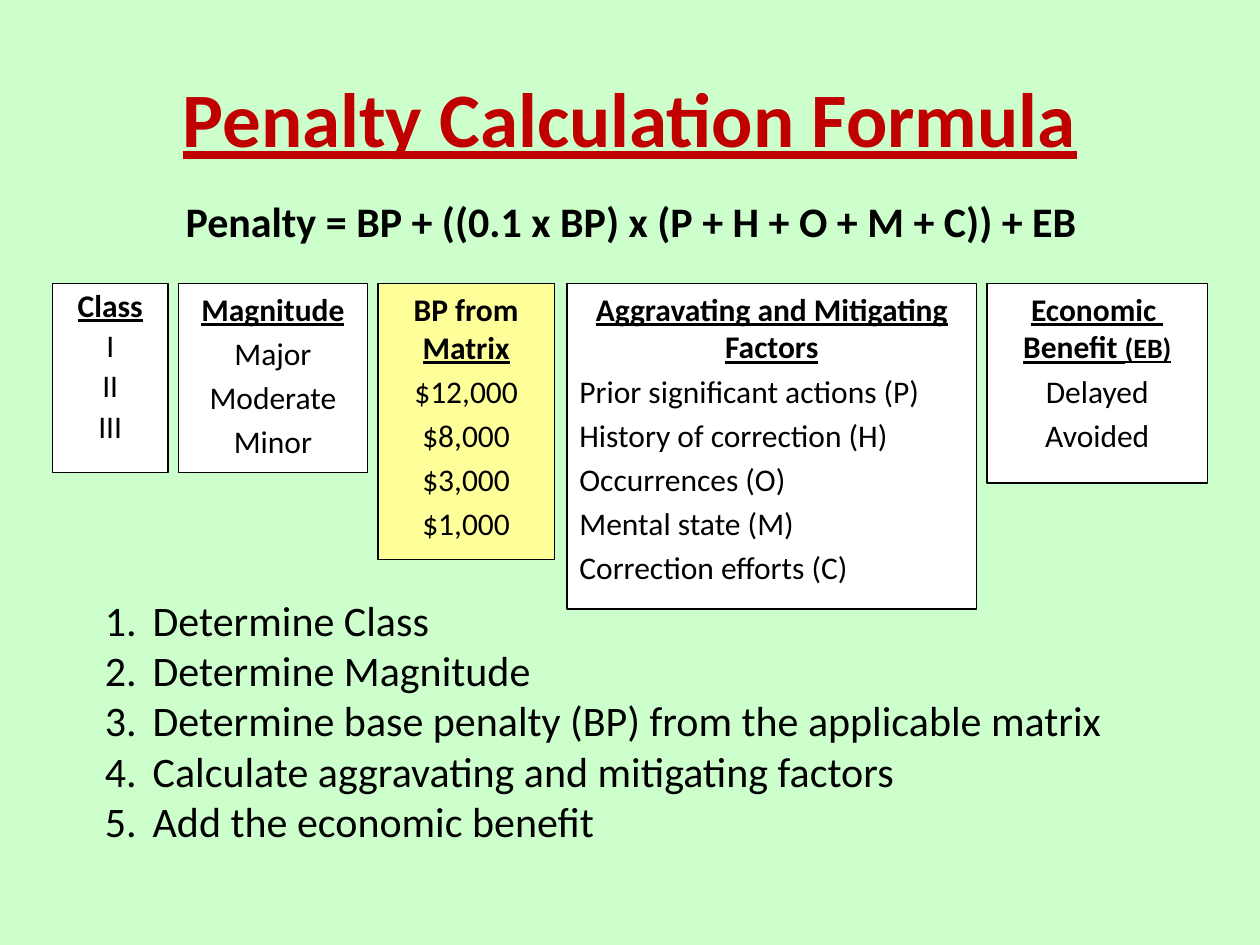
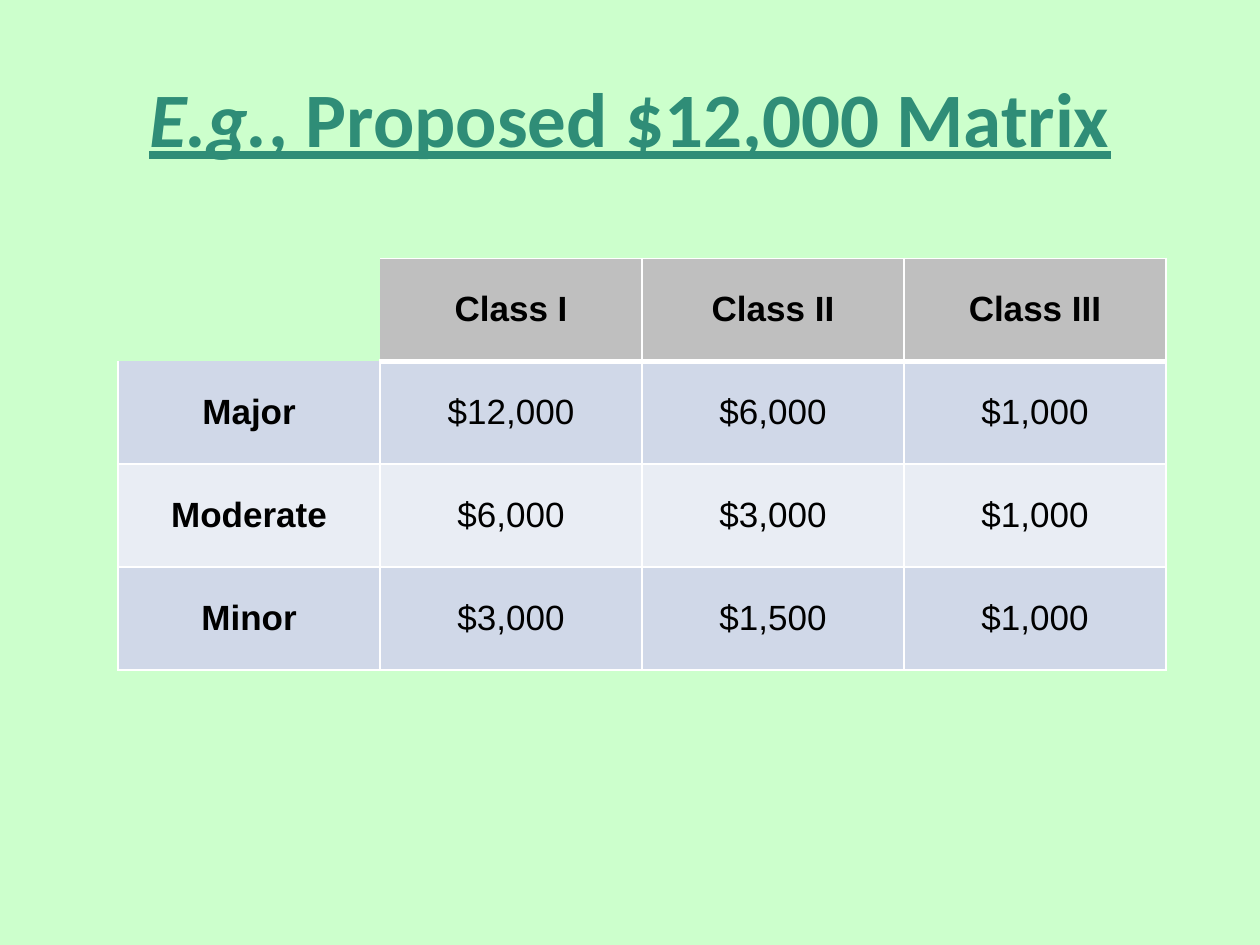
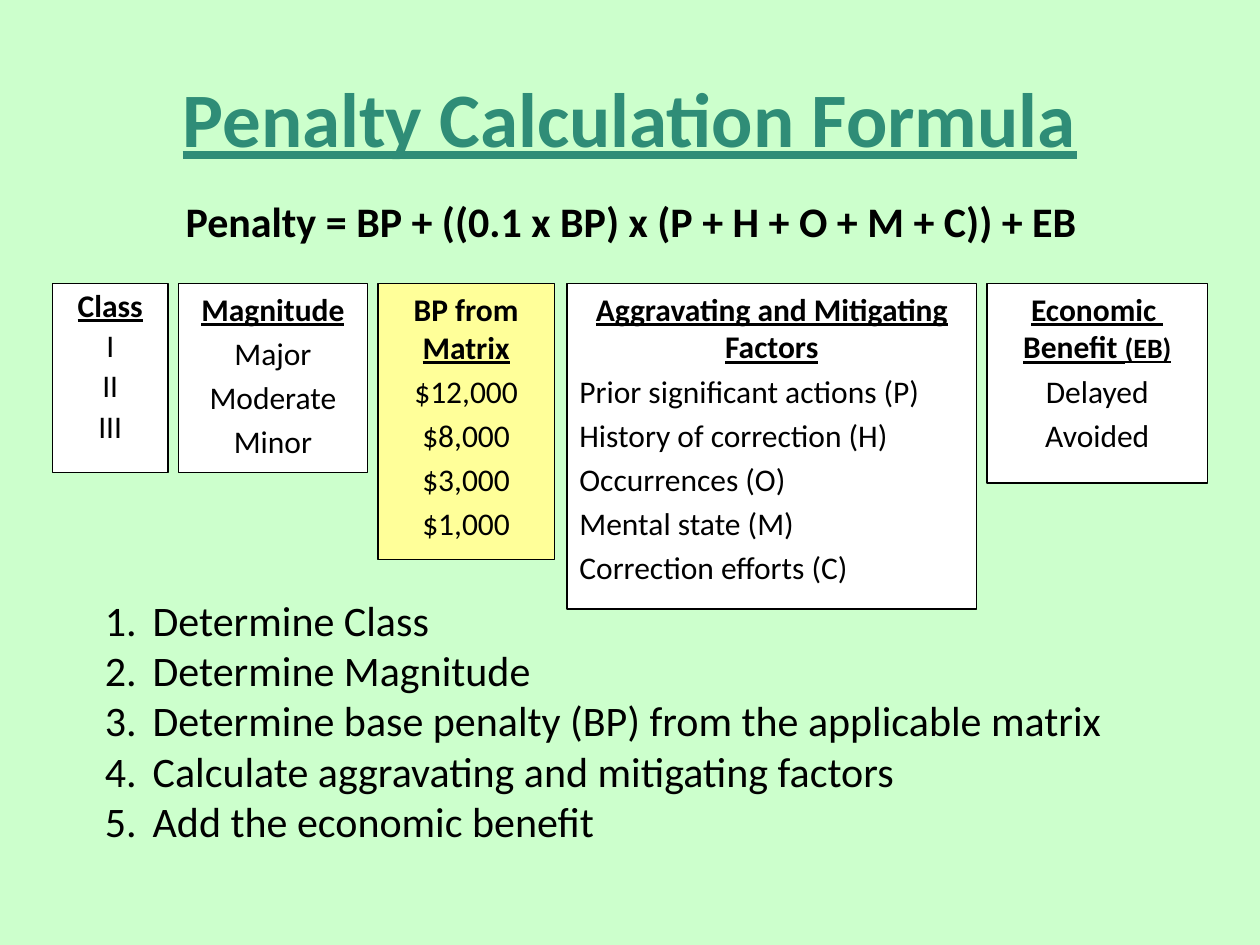
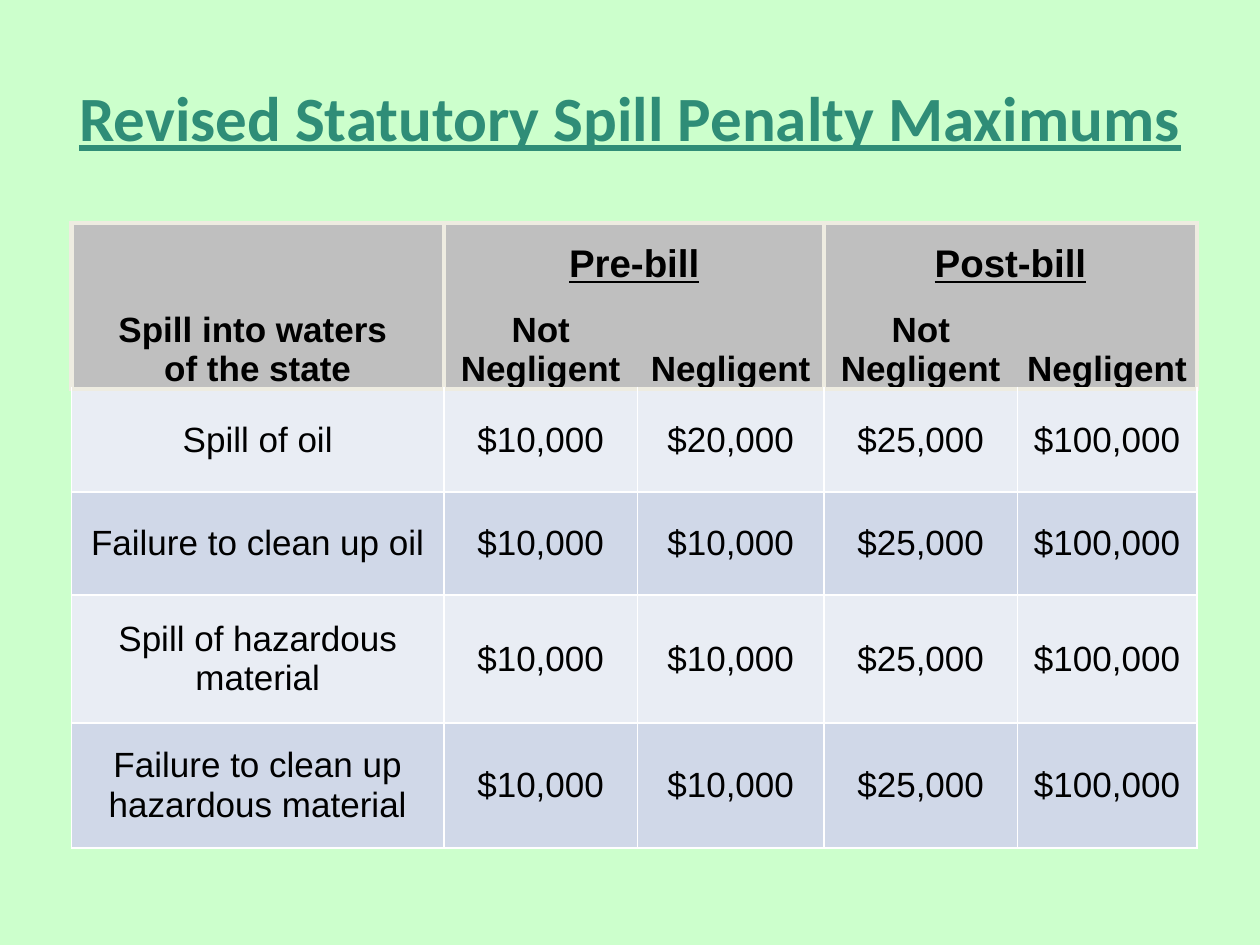
import pptx
import pptx.dml.color
import pptx.enum.shapes
import pptx.enum.text
import pptx.oxml.ns
import pptx.util
from lxml import etree

hues = {
    "page": "CCFFCC", "ink": "000000", "white": "FFFFFF", "yellow": "FFFF99",
    "red": "C00000", "teal": "2F8D77", "gray": "BFBFBF", "cream": "EEECE1",
    "blue": "D0D8E8", "pale": "E9EDF4",
}
rgb = {name: pptx.dml.color.RGBColor.from_string(code) for name, code in hues.items()}
align = pptx.enum.text.PP_ALIGN
anchor = pptx.enum.text.MSO_ANCHOR
fit = pptx.enum.text.MSO_AUTO_SIZE
qn = pptx.oxml.ns.qn


def write(frame, text, size=18, font="Calibri", color="ink", bold=False, under=False,
          side=align.CENTER, gap=0, lead=None, hang=0, count=False):
    """Add a paragraph; text is a string or a list of (string, changes) runs."""
    para = frame.add_paragraph() if frame.text else frame.paragraphs[0]
    para.alignment = side
    para.space_before = pptx.util.Pt(gap)
    para.line_spacing = lead
    props = para._p.get_or_add_pPr()
    indent = pptx.util.Inches(hang)
    props.set("marL", str(indent))
    props.set("indent", str(-indent))
    if count:
        etree.SubElement(props, qn("a:buFont"), typeface="+mj-lt")
        etree.SubElement(props, qn("a:buAutoNum"), type="arabicPeriod")
    else:
        etree.SubElement(props, qn("a:buNone"))
    for part, change in [(text, {})] if isinstance(text, str) else text:
        run = para.add_run()
        run.text = part
        look = run.font
        look.name = font
        look.size = pptx.util.Pt(change.get("size", size))
        look.bold = bold
        look.italic = change.get("italic", False)
        look.underline = change.get("under", under)
        look.color.rgb = rgb[color]


def edge(cell, side, color, width):
    """Draw one side of a cell, or clear it when the width is 0."""
    line = etree.SubElement(cell._tc.get_or_add_tcPr(), qn("a:ln" + side),
                            w=str(pptx.util.Pt(width)))
    if width:
        fill = etree.SubElement(line, qn("a:solidFill"))
        etree.SubElement(fill, qn("a:srgbClr"), val=hues[color])
    else:
        etree.SubElement(line, qn("a:noFill"))


# Page: a grid of 120 columns by 90 rows
deck = pptx.Presentation()
deck.slide_width = pptx.util.Inches(10)
deck.slide_height = pptx.util.Inches(7.5)
unit = deck.slide_width / 120
back = deck.slide_master.background.fill
back.solid()
back.fore_color.rgb = rgb["page"]

# Formula boxes: left, width, height, fill, item side, heading lines, items
top = 27
boxes = [
    (5, 11, 18, "white", align.CENTER, ["Class"], ["I", "II", "III"]),
    (17, 18, 18, "white", align.CENTER, ["Magnitude"], ["Major", "Moderate", "Minor"]),
    (36, 16.8, 26.3, "yellow", align.CENTER,
     [[("BP from ", {"under": False}), ("Matrix", {})]],
     ["$12,000", "$8,000", "$3,000", "$1,000"]),
    (54, 39, 31, "white", align.LEFT, ["Aggravating and Mitigating Factors"],
     ["Prior significant actions (P)", "History of correction (H)", "Occurrences (O)",
      "Mental state (M)", "Correction efforts (C)"]),
    (94, 21, 19, "white", align.CENTER,
     ["Economic ", [("Benefit ", {}), ("(EB)", {"size": 16})]], ["Delayed", "Avoided"]),
]
steps = [
    "Determine Class",
    "Determine Magnitude",
    "Determine base penalty (BP) from the applicable matrix",
    "Calculate aggravating and mitigating factors",
    "Add the economic benefit",
]

# Tables: "edges" names the ruled sides of each heading cell
matrix = {
    "title": [("E.g.", {"italic": True}), (", Proposed $12,000 Matrix", {})],
    "size": 44, "at": (11.25, 24.6), "cols": [24.95] * 4, "rows": [9.8] * 4,
    "edges": [["", "TRB", "LTRB", "LTRB"]], "rule": "white", "thin": 1,
    "merge": [], "stub": True, "foot": anchor.MIDDLE,
    "cells": [
        ["", "Class I", "Class II", "Class III"],
        ["Major", "$12,000", "$6,000", "$1,000"],
        ["Moderate", "$6,000", "$3,000", "$1,000"],
        ["Minor", "$3,000", "$1,500", "$1,000"],
    ],
}
same = ["$10,000", "$10,000", "$25,000", "$100,000"]
spill = {
    "title": "Revised Statutory Spill Penalty Maximums",
    "size": 36, "at": (6.8, 21.25), "cols": [35.5, 18.4, 17.8, 18.4, 17.1],
    "rows": [6, 9.8, 9.8, 9.8, 12.2, 11.9],
    "edges": [["LTRB"] + ["LTR", "TR"] * 2, ["LRB"] + ["LB", "RB"] * 2],
    "rule": "cream", "thin": 3,
    "merge": [(0, 0, 1, 0), (0, 1, 0, 2), (0, 3, 0, 4)],
    "stub": False, "foot": anchor.BOTTOM,
    "cells": [
        ["Spill into waters \nof the state", "Pre-bill", "", "Post-bill", ""],
        [""] + ["Not Negligent", "Negligent"] * 2,
        ["Spill of oil", "$10,000", "$20,000", "$25,000", "$100,000"],
        ["Failure to clean up oil"] + same,
        ["Spill of hazardous material"] + same,
        ["Failure to clean up hazardous material"] + same,
    ],
}

for tint, data in [("red", matrix), ("teal", spill)]:
    # Both slides of the pair and their titles
    first = deck.slides.add_slide(deck.slide_layouts[1])
    second = deck.slides.add_slide(deck.slide_layouts[5])
    for slide, text, size, color in [
        (first, "Penalty Calculation Formula", 44, tint),
        (second, data["title"], data["size"], "teal"),
    ]:
        title = slide.shapes.title
        title.left, title.top, title.width, title.height = [
            round(n * unit) for n in (6, 3.6, 108, 15)]
        title.text_frame.auto_size = fit.NONE
        title.text_frame.vertical_anchor = anchor.MIDDLE
        write(title.text_frame, text, size=size, color=color, bold=True, under=True)

    # Boxes, the first one in the body placeholder
    for left, width, height, fill, side, heads, items in boxes:
        spot = [round(n * unit) for n in (left, top, width, height)]
        if heads == ["Class"]:
            box, lead = first.placeholders[1], 0.9
            box.left, box.top, box.width, box.height = spot
        else:
            box, lead = first.shapes.add_shape(
                pptx.enum.shapes.MSO_SHAPE.RECTANGLE, *spot), None
        box.shadow.inherit = False
        box.fill.solid()
        box.fill.fore_color.rgb = rgb[fill]
        box.line.color.rgb = rgb["ink"]
        box.line.width = pptx.util.Pt(0.75)
        frame = box.text_frame
        frame.word_wrap = True
        frame.auto_size = fit.NONE
        frame.vertical_anchor = anchor.TOP
        for row, head in enumerate(heads):
            write(frame, head, bold=True, under=True, gap=0 if row else 3.6, lead=lead)
        for item in items:
            write(frame, item, side=side, gap=3.6, lead=lead)

    # Formula line and numbered steps
    for spot, lines, wrap, look in [
        ((16.5, 18, 102.5, 6), ["Penalty = BP + ((0.1 x BP) x (P + H + O + M + C)) + EB"],
         False, {"bold": True}),
        ((8.8, 56, 111.2, 25.2), steps, True, {"hang": 0.38, "count": True}),
    ]:
        frame = first.shapes.add_textbox(*[round(n * unit) for n in spot]).text_frame
        frame.word_wrap = wrap
        frame.auto_size = fit.SHAPE_TO_FIT_TEXT
        for line in lines:
            write(frame, line, size=24, side=align.LEFT, **look)

    # Table frame
    cols, rows, edges = data["cols"], data["rows"], data["edges"]
    spot = [round(n * unit) for n in (*data["at"], sum(cols), sum(rows))]
    table = second.shapes.add_table(len(rows), len(cols), *spot).table
    table.first_row = table.horz_banding = False
    for col, width in zip(table.columns, cols):
        col.width = round(width * unit)
    for row, height in zip(table.rows, rows):
        row.height = round(height * unit)
    for y, x, low, right in data["merge"]:
        table.cell(y, x).merge(table.cell(low, right))

    # Table cells
    deep = len(edges)
    for y, texts in enumerate(data["cells"]):
        for x, text in enumerate(texts):
            cell = table.cell(y, x)
            head = y < deep
            cell.margin_left = cell.margin_right = pptx.util.Inches(0.07)
            cell.margin_top = cell.margin_bottom = 0
            cell.vertical_anchor = data["foot"] if head else anchor.MIDDLE
            for side in "LRTB":
                color, wide = "white", 1
                if head:
                    color = data["rule"]
                    wide = 3 if side == "B" else data["thin"]
                    wide = wide if side in edges[y][x] else 0
                elif y == deep and side == "T":
                    color = data["rule"]
                    wide = 3 if "B" in edges[-1][x] else 0
                edge(cell, side, color, wide)
            cell.fill.solid()
            fill = "pale" if y % 2 == 0 else "blue"
            if head:
                fill = "gray" if edges[y][x] else "page"
            cell.fill.fore_color.rgb = rgb[fill]
            over = text.endswith("-bill")
            for line in text.split("\n") if text else []:
                write(cell.text_frame, line, size=22 if over else 20, font="Arial",
                      bold=head or (data["stub"] and x == 0), under=over)

deck.save("out.pptx")
